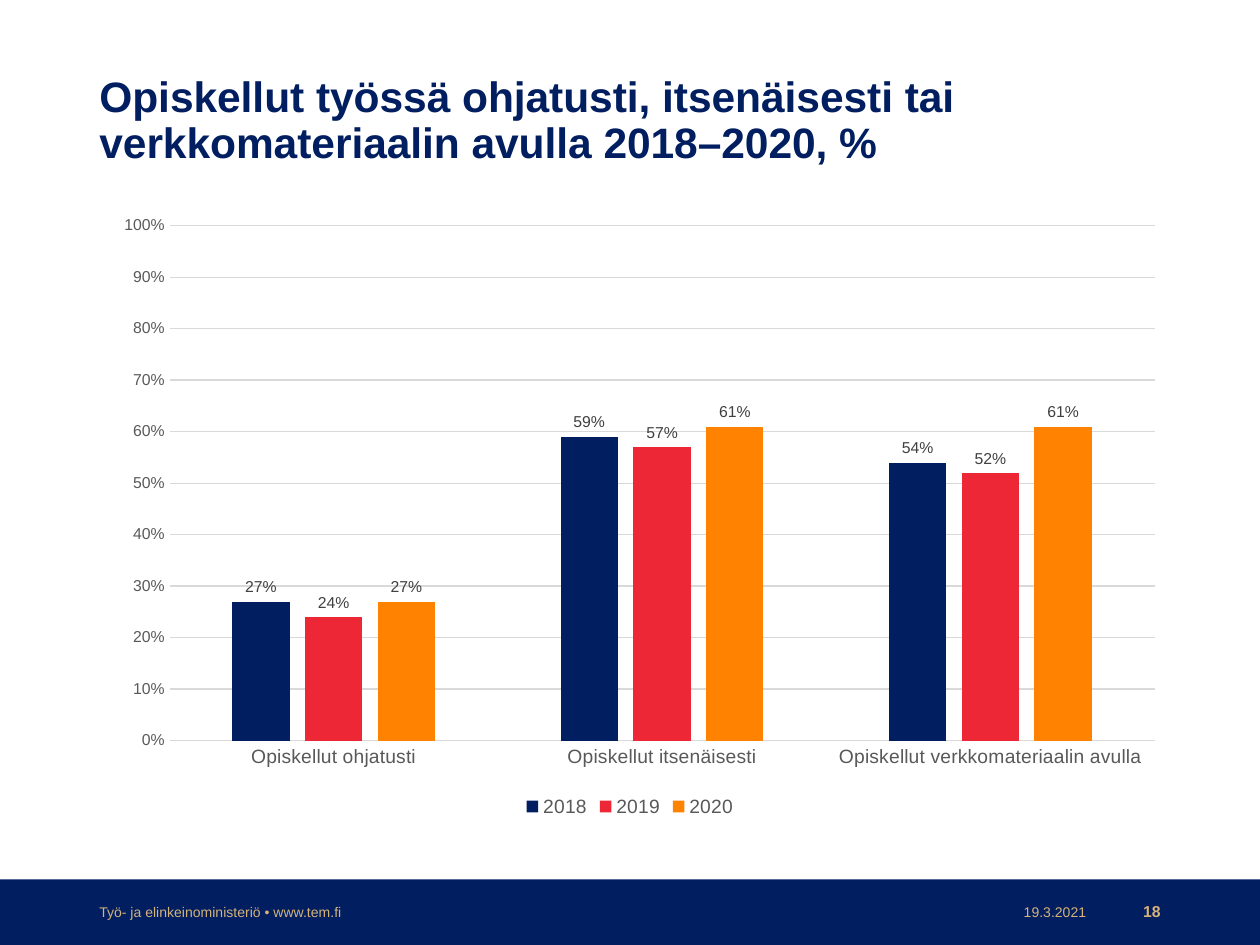
from lxml.etree import SubElement
from pptx import Presentation
from pptx.chart.data import CategoryChartData
from pptx.dml.color import RGBColor
from pptx.enum.chart import XL_CHART_TYPE, XL_LABEL_POSITION, XL_LEGEND_POSITION, XL_TICK_MARK
from pptx.enum.shapes import MSO_SHAPE
from pptx.enum.text import MSO_ANCHOR, PP_ALIGN
from pptx.oxml.ns import qn
from pptx.util import Inches, Pt

NAVY = RGBColor(0x00, 0x1E, 0x60)
RED = RGBColor(0xEE, 0x27, 0x37)
ORANGE = RGBColor(0xFF, 0x82, 0x00)
GOLD = RGBColor(0xD5, 0xB3, 0x7A)
DARK_GREY = RGBColor(0x40, 0x40, 0x40)
GREY = RGBColor(0x59, 0x59, 0x59)
LIGHT_GREY = RGBColor(0xD9, 0xD9, 0xD9)

COLUMNS, ROWS = 100, 75
LEFT, RIGHT = 6.9, 93.1
FOOTER_ROW, FOOTER_HEIGHT = 71.2, 2.3


class SlideBuilder:
    """Holds the style and the current slide; lengths are grid columns and rows."""

    font_name = "Arial"

    def __init__(self, presentation):
        self.cell_width = presentation.slide_width / COLUMNS
        self.cell_height = presentation.slide_height / ROWS
        self.slide = presentation.slides.add_slide(presentation.slide_layouts[6])

    def place(self, column, row, columns, rows):
        return (round(column * self.cell_width), round(row * self.cell_height),
                round(columns * self.cell_width), round(rows * self.cell_height))

    def style(self, font, size, color, bold=False):
        font.name, font.size, font.bold = self.font_name, Pt(size), bold
        font.color.rgb = color

    def band(self, area, color):
        band = self.slide.shapes.add_shape(MSO_SHAPE.RECTANGLE, *self.place(*area))
        band.shadow.inherit = False
        band.fill.solid()
        band.fill.fore_color.rgb = color
        band.line.fill.background()

    def text(self, area, words, size, color, bold=False, align=PP_ALIGN.LEFT,
             anchor=MSO_ANCHOR.MIDDLE, spacing=1.0):
        frame = self.slide.shapes.add_textbox(*self.place(*area)).text_frame
        frame.word_wrap = True
        frame.vertical_anchor = anchor
        frame.margin_top = frame.margin_bottom = Inches(0.02)
        frame.text = words
        paragraph = frame.paragraphs[0]
        paragraph.alignment, paragraph.line_spacing = align, spacing
        self.style(paragraph.runs[0].font, size, color, bold)

    def column_chart(self, area, categories, series_rows, plot_percent):
        data = CategoryChartData(number_format="0%")
        data.categories = categories
        for name, values, _ in series_rows:
            data.add_series(name, values)
        chart = self.slide.shapes.add_chart(
            XL_CHART_TYPE.COLUMN_CLUSTERED, *self.place(*area), data).chart
        chart.has_title = False
        chart.font.name, chart.font.size = self.font_name, Pt(10)

        # Columns and their labels
        plot = chart.plots[0]
        plot.gap_width, plot.overlap, plot.vary_by_categories = 219, -27, False
        for series, (_, _, color) in zip(plot.series, series_rows):
            series.format.fill.solid()
            series.format.fill.fore_color.rgb = color
            labels = series.data_labels
            labels.show_value = True
            labels.position = XL_LABEL_POSITION.OUTSIDE_END
            labels.number_format, labels.number_format_is_linked = "0%", False
            self.style(labels.font, 9, DARK_GREY)

        # Axes
        category_axis, value_axis = chart.category_axis, chart.value_axis
        for axis, size in ((category_axis, 11), (value_axis, 9)):
            axis.major_tick_mark = axis.minor_tick_mark = XL_TICK_MARK.NONE
            self.style(axis.tick_labels.font, size, GREY)
        value_axis.minimum_scale, value_axis.maximum_scale = 0, 1
        value_axis.major_unit = 0.1
        value_axis.tick_labels.number_format = "0%"
        value_axis.tick_labels.number_format_is_linked = False
        value_axis.format.line.fill.background()
        for line in (category_axis.format.line, value_axis.major_gridlines.format.line):
            line.color.rgb, line.width = LIGHT_GREY, Pt(0.75)

        # Legend
        chart.has_legend = True
        chart.legend.position = XL_LEGEND_POSITION.BOTTOM
        chart.legend.include_in_layout = False
        self.style(chart.legend.font, 11, GREY)

        self.fix_plot_area(chart, plot_percent)

    def fix_plot_area(self, chart, plot_percent):
        plot_area = chart.element.find(".//" + qn("c:plotArea"))
        for old_layout in plot_area.findall(qn("c:layout")):
            plot_area.remove(old_layout)
        layout = SubElement(plot_area, qn("c:layout"))
        plot_area.insert(0, layout)
        manual = SubElement(layout, qn("c:manualLayout"))
        settings = [("layoutTarget", "inner"), ("xMode", "edge"), ("yMode", "edge")]
        settings += [(side, str(percent / 100)) for side, percent in zip("xywh", plot_percent)]
        for tag, value in settings:
            SubElement(manual, qn("c:" + tag)).set("val", value)


def main():
    presentation = Presentation()
    presentation.slide_width, presentation.slide_height = Inches(10), Inches(7.5)
    builder = SlideBuilder(presentation)

    # Title
    builder.text((LEFT, 5.8, 78.8, 10.9),
                 "Opiskellut työssä ohjatusti, itsenäisesti tai verkkomateriaalin avulla 2018–2020, %",
                 24.3, NAVY, bold=True, anchor=MSO_ANCHOR.TOP, spacing=0.9)

    # Shares by way of studying and year
    builder.column_chart(
        (LEFT, 16.7, RIGHT - LEFT, 48.6),
        ["Opiskellut ohjatusti", "Opiskellut itsenäisesti", "Opiskellut verkkomateriaalin avulla"],
        [("2018", (0.27, 0.59, 0.54), NAVY),
         ("2019", (0.24, 0.57, 0.52), RED),
         ("2020", (0.27, 0.61, 0.61), ORANGE)],
        plot_percent=(7.6, 2.5, 90.7, 84.1))

    # Footer
    builder.band((0, 69.8, COLUMNS, ROWS - 69.8), NAVY)
    for column, columns, words, size, bold, align in (
            (LEFT, 33.7, "Työ- ja elinkeinoministeriö •\u00a0www.tem.fi", 8, False, PP_ALIGN.LEFT),
            (79.5, 7.7, "19.3.2021", 8, False, PP_ALIGN.RIGHT),
            (87.2, RIGHT - 87.2, "18", 9, True, PP_ALIGN.RIGHT)):
        builder.text((column, FOOTER_ROW, columns, FOOTER_HEIGHT), words, size, GOLD, bold, align)

    presentation.save("out.pptx")


if __name__ == "__main__":
    main()
